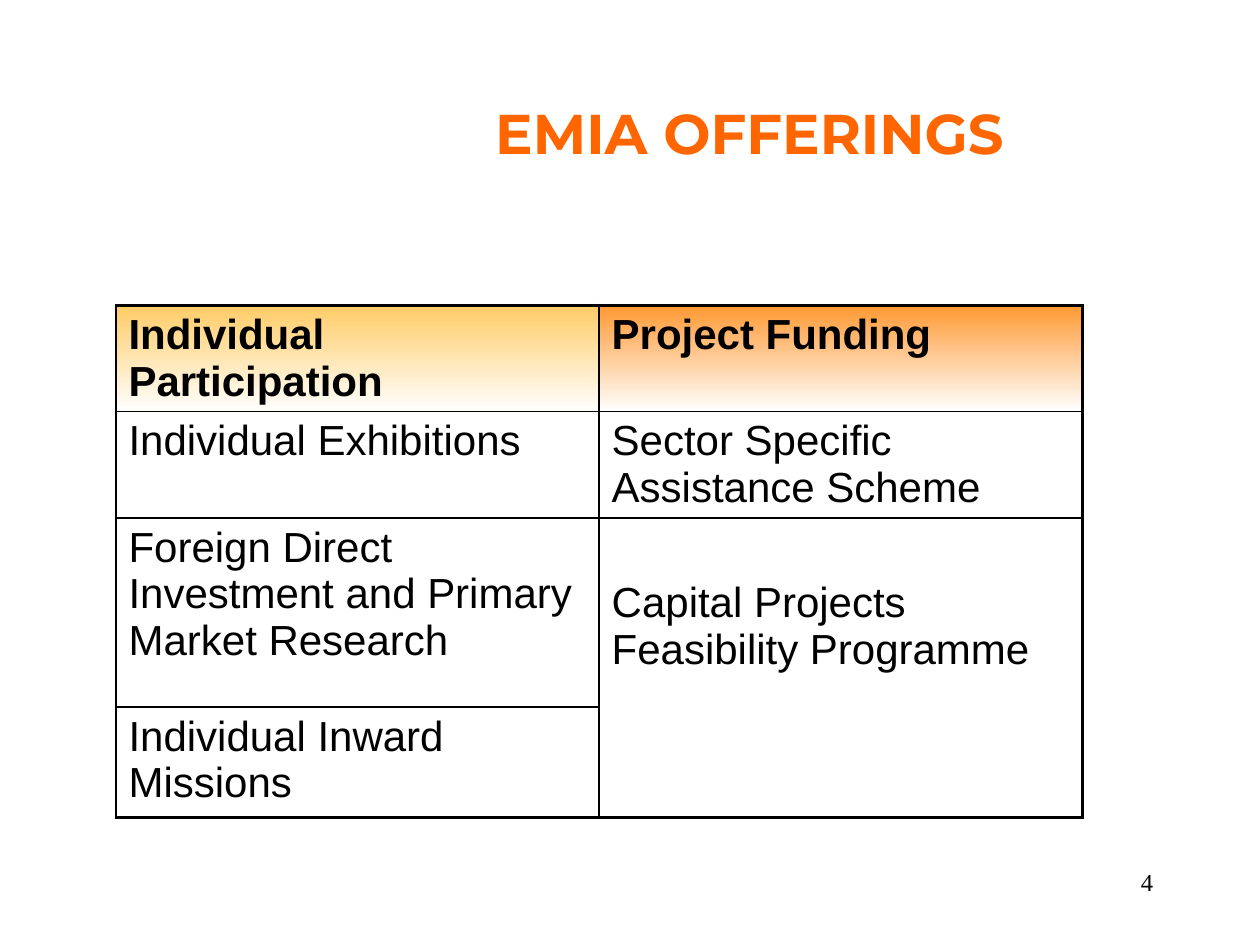
from lxml import etree
from pptx import Presentation
from pptx.dml.color import RGBColor
from pptx.enum.text import MSO_ANCHOR, PP_ALIGN
from pptx.oxml.ns import qn
from pptx.util import Inches, Pt

MIDDLE = MSO_ANCHOR.MIDDLE
CENTER, RIGHT = PP_ALIGN.CENTER, PP_ALIGN.RIGHT
WIDE, HIGH = Inches(10), Inches(7.5)
THIN, THICK = 1, 2.25
INK = "000000"
HEAD = {"name": "Montserrat", "size": Pt(32), "bold": True}
BODY = {"name": "Arial", "size": Pt(24), "bold": False}
PAGE = {"name": "Times New Roman", "size": Pt(14)}
TINTS = ["FFCC66", "FF9933"]
ROWS = [
    ["Individual Participation", "Project Funding"],
    ["Individual Exhibitions", "Sector Specific Assistance Scheme"],
    ["Foreign Direct Investment and Primary Market Research",
     "Capital Projects Feasibility Programme"],
    ["Individual Inward Missions", ""],
]
TALL = [0.84, 0.84, 1.5, 0.88]


def paint(hue):
    return RGBColor.from_string(hue)


def share(left, top, width, height):
    return [round(WIDE * left), round(HIGH * top),
            round(WIDE * width), round(HIGH * height)]


def place(shape, box):
    for key, value in zip(("left", "top", "width", "height"), box):
        setattr(shape, key, value)


def write(frame, text, form, hue=INK, align=None):
    frame.word_wrap = True
    para = frame.paragraphs[0]
    para.alignment = align
    run = para.add_run()
    run.text = text
    for key, value in form.items():
        setattr(run.font, key, value)
    run.font.color.rgb = paint(hue)


def edge(cell, widths):
    props = cell._tc.get_or_add_tcPr()
    for side, width in zip("LRTB", widths):
        line = etree.SubElement(props, qn(f"a:ln{side}"), w=str(Pt(width)))
        solid = etree.SubElement(line, qn("a:solidFill"))
        etree.SubElement(solid, qn("a:srgbClr"), val=INK)


def shade(cell, hue):
    cell.fill.gradient()
    cell.fill.gradient_angle = 270
    for stop, tone in zip(cell.fill.gradient_stops, (hue, "FFFFFF")):
        stop.color.rgb = paint(tone)


def add_title(slide, box):
    title = slide.shapes.title
    place(title, box)
    title.text_frame.vertical_anchor = MIDDLE
    write(title.text_frame, "EMIA OFFERINGS", HEAD, "FF6600", CENTER)


def add_grid(slide, box):
    last, end = len(ROWS) - 1, len(ROWS[0]) - 1
    grid = slide.shapes.add_table(last + 1, end + 1, *box).table
    grid.first_row = grid.horz_banding = False
    for row, tall in zip(grid.rows, TALL):
        row.height = Inches(tall)
    for r, texts in enumerate(ROWS):
        for c, text in enumerate(texts):
            cell = grid.cell(r, c)
            edge(cell, [THIN, THICK if c == end else THIN,
                        THICK if r == 0 else THIN,
                        THICK if r == last or (r, c) == (2, end) else THIN])
            if r == 0:
                shade(cell, TINTS[c])
            else:
                cell.fill.solid()
                cell.fill.fore_color.rgb = paint("FFFFFF")
            if text:
                write(cell.text_frame, text, BODY | {"bold": r == 0})
    joint = grid.cell(2, end)
    joint.merge(grid.cell(last, end))
    joint.margin_top = Inches(0.49)


def add_page(slide, box):
    note = slide.shapes.add_textbox(*box)
    write(note.text_frame, "4", PAGE, align=RIGHT)


def main():
    deck = Presentation()
    deck.slide_width, deck.slide_height = WIDE, HIGH
    slide = deck.slides.add_slide(deck.slide_layouts[5])
    add_title(slide, share(0.21, 0.06, 0.77, 0.16))
    add_grid(slide, share(0.092, 0.323, 0.767, 0.541))
    add_page(slide, share(0.717, 0.911, 0.208, 0.067))
    deck.save("out.pptx")


if __name__ == "__main__":
    main()
